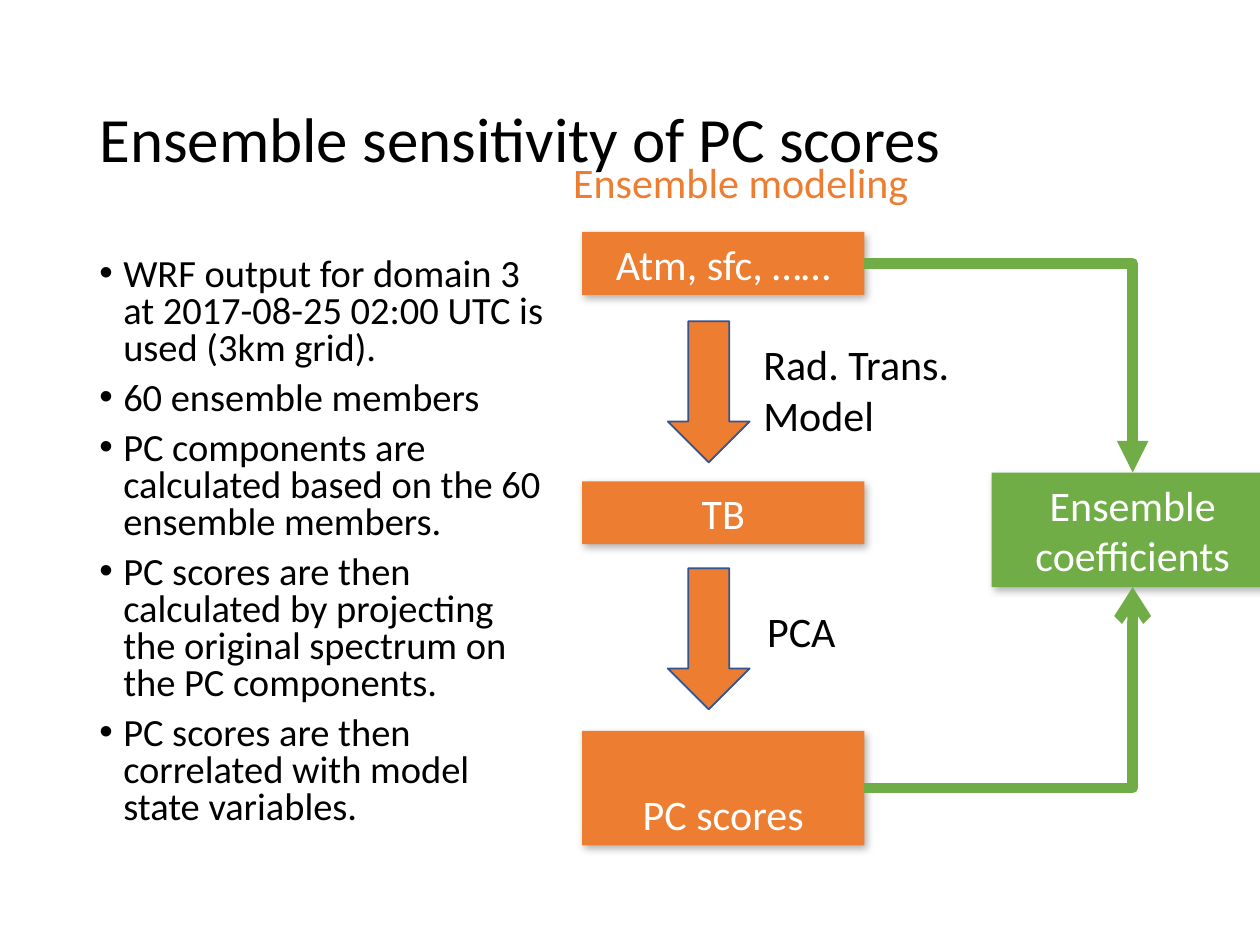
"""Builds a slide on the ensemble sensitivity of PC scores."""
from dataclasses import dataclass

from lxml import etree
from pptx import Presentation
from pptx import util as u
from pptx.dml.color import RGBColor
from pptx.enum import shapes, text
from pptx.oxml import ns


@dataclass(frozen=True)
class Theme:
    """Colours, font and type sizes of the slide."""
    font: str = "Calibri"
    ink: str = "000000"
    paper: str = "FFFFFF"
    model: str = "ED7D31"
    result: str = "70AD47"
    outline: str = "325491"
    title: float = 36
    body: float = 22
    label: float = 24


THEME = Theme()
TOP, LEFT, BOTTOM, RIGHT = range(4)
FLOW_LEFT, BOX_WIDTH = 4.62, 2.24
ONE_LINE, TWO_LINES = 0.5, 0.91
POINTS = [
    "WRF output for domain 3 at 2017-08-25 02:00 UTC is used (3km grid).",
    "60 ensemble members",
    "PC components are calculated based on the 60 ensemble members.",
    "PC scores are then calculated by projecting the original spectrum on the PC components.",
    "PC scores are then correlated with model state variables.",
]


def color(value):
    """Return the RGB colour for a hex value."""
    return RGBColor.from_string(value)


def add_xml(parent, tag, **attributes):
    """Append a DrawingML element to a parent and return it."""
    return etree.SubElement(parent, ns.qn(f"a:{tag}"), attributes)


def write(shape, lines, size=THEME.label, ink=THEME.ink, align=text.PP_ALIGN.LEFT,
          anchor=text.MSO_ANCHOR.TOP, spacing=1.0, before=0, bullet=False):
    """Fill a shape with one formatted paragraph per line."""
    frame = shape.text_frame
    frame.word_wrap = True
    frame.vertical_anchor = anchor
    frame.text = "\n".join(lines)
    for para in frame.paragraphs:
        para.alignment = align
        para.line_spacing = spacing
        para.space_before = u.Pt(before)
        font = para.runs[0].font
        font.name, font.size = THEME.font, u.Pt(size)
        font.color.rgb = color(ink)
        if bullet:
            properties = para._p.get_or_add_pPr()
            indent = u.Inches(0.19)
            properties.set("marL", str(indent))
            properties.set("indent", str(-indent))
            add_xml(properties, "buFont", typeface="Arial")
            add_xml(properties, "buChar", char="•")


def add_text(page, lines, left, top, width, height, **style):
    """Add a text box with the given style."""
    box = page.shapes.add_textbox(*map(u.Inches, (left, top, width, height)))
    write(box, lines, **style)


def add_box(page, line, left, top, height, fill=THEME.model, anchor=text.MSO_ANCHOR.MIDDLE):
    """Add a filled, shadowed box with a centred label."""
    box = page.shapes.add_shape(shapes.MSO_SHAPE.RECTANGLE,
                                *map(u.Inches, (left, top, BOX_WIDTH, height)))
    box.fill.solid()
    box.fill.fore_color.rgb = color(fill)
    box.line.fill.background()
    box.shadow.inherit = False
    effects = box._element.spPr.find(ns.qn("a:effectLst"))
    shadow = add_xml(effects, "outerShdw", blurRad=str(u.Pt(4.5)), dist=str(u.Pt(2.6)),
                     dir=str(53 * 60000), algn="ctr", rotWithShape="0")
    add_xml(add_xml(shadow, "srgbClr", val=THEME.ink), "alpha", val="30000")
    write(box, [line], ink=THEME.paper, align=text.PP_ALIGN.CENTER, anchor=anchor)
    return box


def add_down_arrow(page, top):
    """Add a block arrow between two boxes of the flow."""
    arrow = page.shapes.add_shape(shapes.MSO_SHAPE.DOWN_ARROW,
                                  *map(u.Inches, (5.3, top, 0.65, 1.12)))
    arrow.fill.solid()
    arrow.fill.fore_color.rgb = color(THEME.model)
    arrow.line.color.rgb = color(THEME.outline)
    arrow.line.width = u.Pt(1)
    arrow.shadow.inherit = False


def add_elbow(page, source, target, side, head):
    """Join the right of one box to a side of another with a single bend."""
    link = page.shapes.add_connector(shapes.MSO_CONNECTOR.ELBOW, 0, 0, 0, 0)
    link.begin_connect(source, RIGHT)
    link.end_connect(target, side)
    link.line.color.rgb = color(THEME.result)
    link.line.width = u.Pt(6)
    properties = link._element.spPr
    properties.find(ns.qn("a:prstGeom")).set("prst", "bentConnector2")
    add_xml(link.line._get_or_add_ln(), "tailEnd", type=head)
    add_xml(properties, "effectLst")


def main():
    """Build and save the slide."""
    deck = Presentation()
    deck.slide_width, deck.slide_height = u.Inches(10), u.Inches(7.5)
    page = deck.slides.add_slide(deck.slide_layouts[6])

    add_text(page, ["Ensemble sensitivity of PC scores"], 0.69, 0.4, 8.62, 1.45,
             size=THEME.title, anchor=text.MSO_ANCHOR.MIDDLE, spacing=0.9)
    add_text(page, POINTS, 0.69, 2, 3.76, 4.76,
             size=THEME.body, spacing=0.8, before=7.5, bullet=True)

    state = add_box(page, "Atm, sfc, ……", FLOW_LEFT, 1.84, ONE_LINE)
    add_box(page, "TB", FLOW_LEFT, 3.82, ONE_LINE)
    scores = add_box(page, "PC scores", FLOW_LEFT, 5.8, TWO_LINES,
                     anchor=text.MSO_ANCHOR.BOTTOM)
    coefficients = add_box(page, "Ensemble coefficients", 7.87, 3.75, TWO_LINES,
                           fill=THEME.result)
    for top in (2.55, 4.51):
        add_down_arrow(page, top)
    add_elbow(page, state, coefficients, TOP, "triangle")
    add_elbow(page, scores, coefficients, BOTTOM, "arrow")

    add_text(page, ["Ensemble modeling"], 4.45, 1.19, 3.03, ONE_LINE, ink=THEME.model)
    add_text(page, ["Rad. Trans.", "Model"], 5.96, 2.64, 1.88, TWO_LINES)
    add_text(page, ["PCA"], 5.99, 4.76, 1.88, ONE_LINE)
    deck.save("out.pptx")


if __name__ == "__main__":
    main()
